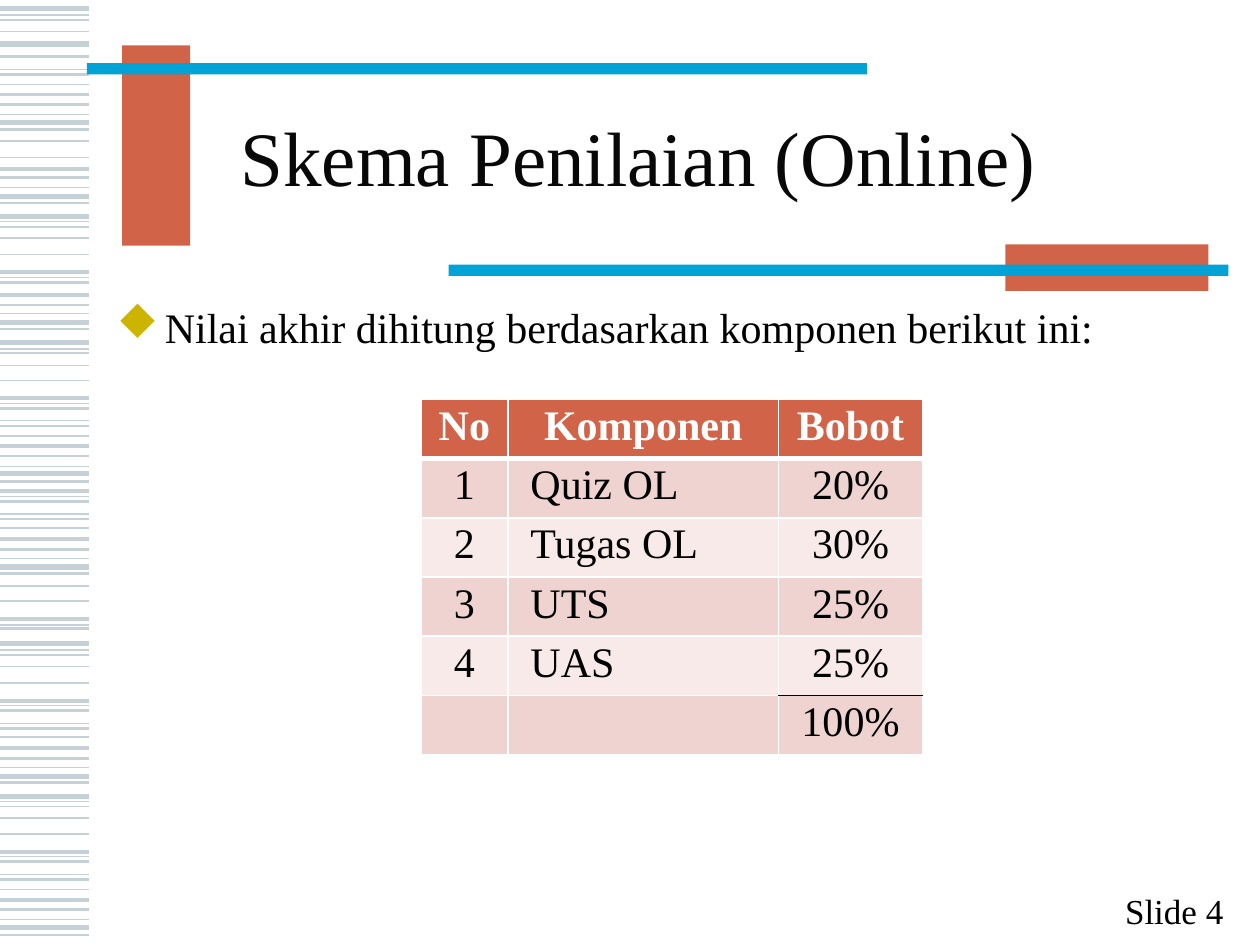
from dataclasses import dataclass

from lxml import etree
from pptx import Presentation
from pptx.dml.color import RGBColor
from pptx.enum.shapes import MSO_CONNECTOR, MSO_SHAPE
from pptx.enum.text import MSO_ANCHOR, PP_ALIGN
from pptx.oxml.ns import qn
from pptx.util import Inches, Pt

STRAIGHT = MSO_CONNECTOR.STRAIGHT
RECTANGLE = MSO_SHAPE.RECTANGLE
LEFT, CENTER = PP_ALIGN.LEFT, PP_ALIGN.CENTER
TOP, MIDDLE, BOTTOM = MSO_ANCHOR.TOP, MSO_ANCHOR.MIDDLE, MSO_ANCHOR.BOTTOM


@dataclass(frozen=True)
class Theme:
    font: str = "Times New Roman"
    bullet_font: str = "Wingdings"
    title_size: int = 44
    body_size: int = 24
    footer_size: int = 20
    title: str = "080808"
    text: str = "000000"
    white: str = "FFFFFF"
    accent: str = "D16349"
    bar: str = "00A3D6"
    stripe: str = "C5D1D7"
    bullet: str = "CCB400"
    bands: tuple = ("EED3D0", "F7EAE9")


THEME = Theme()

TITLE = "Skema Penilaian (Online)"
BODY = "Nilai akhir dihitung berdasarkan komponen berikut ini:"
FOOTER = "Slide 4"
DIAMOND = "u"
TABLE_ROWS = [
    ("No", "Komponen", "Bobot"),
    ("1", "Quiz OL", "20%"),
    ("2", "Tugas OL", "30%"),
    ("3", "UTS", "25%"),
    ("4", "UAS", "25%"),
    ("", "", "100%"),
]
COLUMN_WIDTHS = [0.69, 2.15, 1.14]
ROW_HEIGHT = 0.47
TABLE_LEFT, TABLE_TOP = 3.34, 3.17
NAME_COLUMN, WEIGHT_COLUMN = 1, 2

STRIPE_WIDTH = 0.71
STRIPES = {
    0.75: [0.12, 0.55, 0.91, 1.49, 1.76, 2.2, 2.49, 2.77, 3.2, 3.34, 3.7, 3.94,
           4.08, 4.43, 4.96, 5.16, 5.6, 5.74, 6.09, 6.36, 6.8, 6.94, 7.3],
    1: [0.16, 0.25, 0.67, 1.12, 1.25, 1.8, 1.89, 2.02, 2.8, 2.9, 3.02, 3.46,
        4.19, 4.65, 4.77, 5.2, 5.29, 5.42, 5.85, 6.4, 6.49, 6.62, 7.06],
    1.5: [0.45, 0.59, 0.83, 1.03, 1.41, 1.61, 2.24, 2.42, 2.61, 3.24, 3.38, 3.62, 3.82,
          3.98, 4.12, 4.36, 4.55, 4.99, 5.64, 5.78, 6.02, 6.21, 6.84, 6.98, 7.22, 7.42],
    2.25: [0.75, 1.34, 2.16, 2.34, 3.16, 3.54, 3.9, 4.28, 4.91, 5.56, 5.94, 6.76, 7.14],
    3: [0.07, 0.35, 0.97, 1.56, 1.72, 2.56, 2.72, 3.76, 4.5, 5.11, 6.16, 6.32, 7.36],
}
BLOCKS = [
    (0.97, 0.36, 0.54, 1.59, THEME.accent),
    (0.69, 0.5, 6.19, 0.09, THEME.bar),
    (7.98, 1.94, 1.61, 0.37, THEME.accent),
    (3.56, 2.1, 6.19, 0.09, THEME.bar),
]


def color(value):
    return RGBColor.from_string(value)


def format_paragraph(paragraph, size, value, alignment=LEFT, bold=False):
    paragraph.alignment = alignment
    for run in paragraph.runs:
        font = run.font
        font.name, font.size, font.bold = THEME.font, Pt(size), bold
        font.color.rgb = color(value)


def add_stripes(slide):
    for weight, positions in STRIPES.items():
        for y in positions:
            connector = slide.shapes.add_connector(
                STRAIGHT, 0, Inches(y), Inches(STRIPE_WIDTH), Inches(y))
            connector.line.color.rgb = color(THEME.stripe)
            connector.line.width = Pt(weight)
            properties = connector._element.spPr
            etree.SubElement(properties, qn("a:effectLst"))


def add_blocks(slide):
    for *box, value in BLOCKS:
        shape = slide.shapes.add_shape(RECTANGLE, *map(Inches, box))
        shape.shadow.inherit = False
        shape.fill.solid()
        shape.fill.fore_color.rgb = color(value)
        shape.line.fill.background()


def add_text(slide, box, text, size, value, anchor, alignment=LEFT):
    text_frame = slide.shapes.add_textbox(*map(Inches, box)).text_frame
    text_frame.word_wrap = True
    text_frame.vertical_anchor = anchor
    text_frame.text = text
    format_paragraph(text_frame.paragraphs[0], size, value, alignment)
    return text_frame


def add_bullet(paragraph, indent):
    properties = paragraph._p.get_or_add_pPr()
    properties.set("marL", str(Inches(indent)))
    properties.set("indent", str(-Inches(indent)))
    bullet_color = etree.SubElement(properties, qn("a:buClr"))
    etree.SubElement(bullet_color, qn("a:srgbClr"), val=THEME.bullet)
    etree.SubElement(properties, qn("a:buFont"), typeface=THEME.bullet_font, charset="2")
    etree.SubElement(properties, qn("a:buChar"), char=DIAMOND)


def horizontal_border(boundary, column):
    if boundary == 1:
        return THEME.white, 3
    if boundary == len(TABLE_ROWS) - 1 and column == WEIGHT_COLUMN:
        return THEME.text, 1
    return THEME.white, 1


def set_borders(cell, row, column):
    side = (THEME.white, 1)
    borders = {
        "a:lnL": side,
        "a:lnR": side,
        "a:lnT": horizontal_border(row, column),
        "a:lnB": horizontal_border(row + 1, column),
    }
    properties = cell._tc.get_or_add_tcPr()
    for tag, (value, weight) in borders.items():
        line = etree.SubElement(properties, qn(tag), w=str(Pt(weight)))
        fill = etree.SubElement(line, qn("a:solidFill"))
        etree.SubElement(fill, qn("a:srgbClr"), val=value)


def add_score_table(slide):
    row_count = len(TABLE_ROWS)
    table = slide.shapes.add_table(
        row_count, len(COLUMN_WIDTHS), Inches(TABLE_LEFT), Inches(TABLE_TOP),
        Inches(sum(COLUMN_WIDTHS)), Inches(ROW_HEIGHT * row_count)).table
    for column, width in zip(table.columns, COLUMN_WIDTHS):
        column.width = Inches(width)
    for row, values in enumerate(TABLE_ROWS):
        table.rows[row].height = Inches(ROW_HEIGHT)
        header = row == 0
        for column, text in enumerate(values):
            cell = table.cell(row, column)
            set_borders(cell, row, column)
            cell.fill.solid()
            cell.fill.fore_color.rgb = color(THEME.accent if header else THEME.bands[(row - 1) % 2])
            cell.margin_top, cell.margin_bottom = Inches(0.03), Inches(0.02)
            name_cell = column == NAME_COLUMN and not header
            if name_cell:
                cell.margin_left = Inches(0.18)
            cell.text_frame.text = text
            format_paragraph(
                cell.text_frame.paragraphs[0], THEME.body_size,
                THEME.white if header else THEME.text,
                LEFT if name_cell else CENTER, header)


def main():
    presentation = Presentation()
    presentation.slide_width, presentation.slide_height = Inches(10), Inches(7.5)
    slide = presentation.slides.add_slide(presentation.slide_layouts[6])
    add_stripes(slide)
    add_blocks(slide)
    title = add_text(slide, (1.5, 0.67, 8.07, 1.25), TITLE, THEME.title_size, THEME.title, MIDDLE)
    title.margin_left = Inches(0.41)
    title.paragraphs[0].line_spacing = 0.85
    body = add_text(slide, (0.83, 2.34, 8.92, 4.24), BODY, THEME.body_size, THEME.text, TOP)
    body.paragraphs[0].space_before = Pt(4.8)
    add_bullet(body.paragraphs[0], 0.38)
    add_text(slide, (8.72, 7.04, 1.2, 0.4), FOOTER, THEME.footer_size, THEME.text, BOTTOM, CENTER)
    add_score_table(slide)
    presentation.save("out.pptx")


if __name__ == "__main__":
    main()
